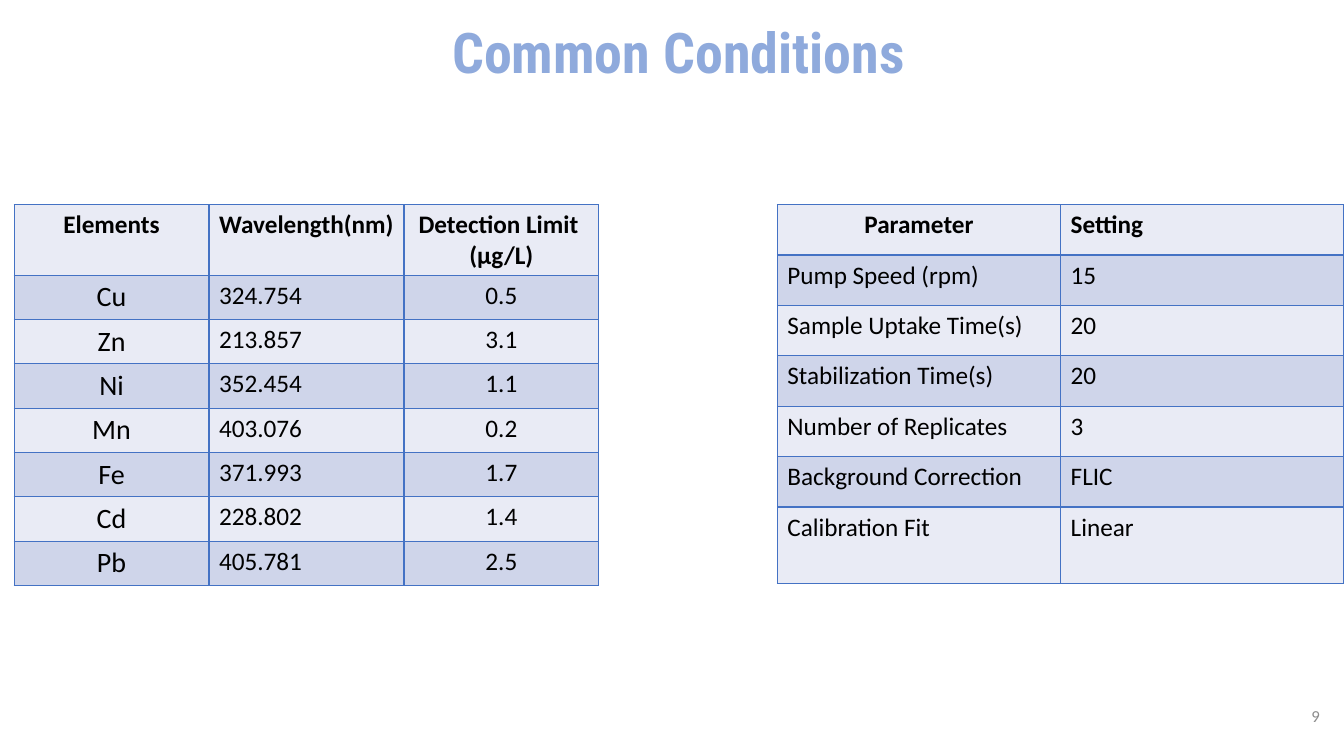
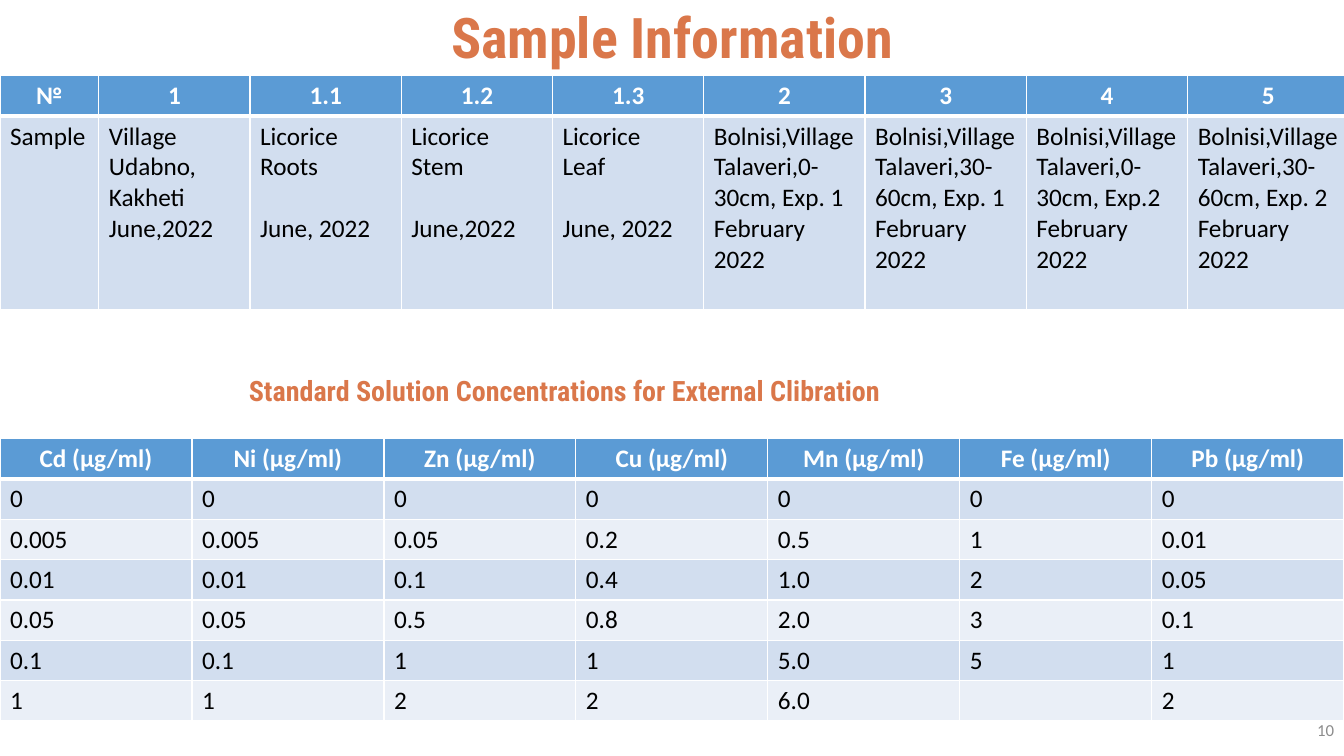
from lxml import etree
from pptx import Presentation
from pptx.dml.color import RGBColor
from pptx.enum.text import MSO_ANCHOR, PP_ALIGN
from pptx.oxml.ns import qn
from pptx.util import Inches, Pt

LEFT, CENTER, RIGHT = PP_ALIGN.LEFT, PP_ALIGN.CENTER, PP_ALIGN.RIGHT
TOP, MIDDLE, BOTTOM = MSO_ANCHOR.TOP, MSO_ANCHOR.MIDDLE, MSO_ANCHOR.BOTTOM

BLACK = RGBColor(0x00, 0x00, 0x00)
WHITE = RGBColor(0xFF, 0xFF, 0xFF)
GRAY = RGBColor(0x8C, 0x8C, 0x8C)
PERIWINKLE = RGBColor(0x8F, 0xAA, 0xDC)
ORANGE = RGBColor(0xDA, 0x77, 0x4A)
BLUE_LINE = RGBColor(0x44, 0x72, 0xC4)
LAVENDER = RGBColor(0xCF, 0xD5, 0xEA)
PALE_LAVENDER = RGBColor(0xE9, 0xEB, 0xF5)
BLUE = RGBColor(0x5B, 0x9B, 0xD5)
SKY = RGBColor(0xD2, 0xDE, 0xEF)
PALE_SKY = RGBColor(0xEA, 0xEF, 0xF7)

BODY_FONT, TITLE_FONT = "Calibri", "Roboto Condensed"
SLIDE_W, SLIDE_H = 13.33, 7.5

# Table looks: header fill and text, alternating body fills, borders in points
LAVENDER_LOOK = dict(head=PALE_LAVENDER, head_text=BLACK,
                     bands=(LAVENDER, PALE_LAVENDER), line=BLUE_LINE, head_rule=1)
BLUE_LOOK = dict(head=BLUE, head_text=WHITE,
                 bands=(SKY, PALE_SKY), line=WHITE, head_rule=3)

# Content; an empty line inside a cell becomes space before the next paragraph
ELEMENTS = [
    ("Elements", "Wavelength(nm)", "Detection Limit \n(μg/L)"),
    ("Cu", "324.754", "0.5"),
    ("Zn", "213.857", "3.1"),
    ("Ni", "352.454", "1.1"),
    ("Mn", "403.076", "0.2"),
    ("Fe", "371.993", "1.7"),
    ("Cd", "228.802", "1.4"),
    ("Pb", "405.781", "2.5"),
]
SETTINGS = [
    ("Parameter", "Setting"),
    ("Pump Speed (rpm)", "15"),
    ("Sample Uptake Time(s)", "20"),
    ("Stabilization Time(s)", "20"),
    ("Number of Replicates", "3"),
    ("Background Correction", "FLIC"),
    ("Calibration Fit", "Linear"),
]
SAMPLES = [
    ("№", "1", "1.1", "1.2", "1.3", "2", "3", "4", "5"),
    ("Sample",
     "Village Udabno,\nKakheti\nJune,2022",
     "Licorice Roots\n\nJune, 2022",
     "Licorice Stem\n\nJune,2022",
     "Licorice\nLeaf\n\nJune, 2022",
     "Bolnisi,Village Talaveri,0-30cm, Exp. 1\nFebruary 2022",
     "Bolnisi,Village Talaveri,30-60cm, Exp. 1\nFebruary 2022",
     "Bolnisi,Village Talaveri,0-30cm, Exp.2\nFebruary 2022",
     "Bolnisi,Village Talaveri,30-60cm, Exp. 2\nFebruary 2022"),
]
STANDARDS = [
    [f"{element} (μg/ml)" for element in ("Cd", "Ni", "Zn", "Cu", "Mn", "Fe", "Pb")],
    ("0", "0", "0", "0", "0", "0", "0"),
    ("0.005", "0.005", "0.05", "0.2", "0.5", "1", "0.01"),
    ("0.01", "0.01", "0.1", "0.4", "1.0", "2", "0.05"),
    ("0.05", "0.05", "0.5", "0.8", "2.0", "3", "0.1"),
    ("0.1", "0.1", "1", "1", "5.0", "5", "1"),
    ("1", "1", "2", "2", "6.0", "", "2"),
]


def write(tf, text, size=18, font=BODY_FONT, color=BLACK, bold=False,
          align=LEFT, spacing=None):
    """Fill a text frame, one paragraph for each line of text."""
    gap, p = 0, None
    for line in text.split("\n"):
        if not line:
            gap = size * 1.22
            continue
        p = tf.add_paragraph() if p is not None else tf.paragraphs[0]
        p.alignment = align
        if spacing:
            p.line_spacing = spacing
        if gap:
            p.space_before = Pt(gap)
            gap = 0
        r = p.add_run()
        r.text = line
        r.font.size, r.font.name, r.font.bold = Pt(size), font, bold
        r.font.color.rgb = color


def add_text(s, x, y, w, h, text, anchor=TOP, **fmt):
    tf = s.shapes.add_textbox(Inches(x), Inches(y), Inches(w), Inches(h)).text_frame
    tf.word_wrap = True
    tf.vertical_anchor = anchor
    write(tf, text, **fmt)


def set_borders(cell, color, bottom=1):
    tcPr = cell._tc.get_or_add_tcPr()
    for side, width in (("L", 1), ("R", 1), ("T", 1), ("B", bottom)):
        ln = etree.SubElement(tcPr, qn(f"a:ln{side}"), w=str(Pt(width)))
        fill = etree.SubElement(ln, qn("a:solidFill"))
        etree.SubElement(fill, qn("a:srgbClr"), val=str(color))


def add_table(s, x, y, cols, heights, rows, look,
              left_heads=(), centered=(), sizes=None):
    """left_heads and centered list columns; sizes maps a column to its body size."""
    table = s.shapes.add_table(len(rows), len(cols), Inches(x), Inches(y),
                               Inches(sum(cols)), Inches(sum(heights))).table
    for column, w in zip(table.columns, cols):
        column.width = Inches(w)
    for row, h in zip(table.rows, heights):
        row.height = Inches(h)
    for i, row in enumerate(rows):
        head = i == 0
        for j, text in enumerate(row):
            cell = table.cell(i, j)
            set_borders(cell, look["line"], look["head_rule"] if head else 1)
            cell.fill.solid()
            cell.fill.fore_color.rgb = look["head"] if head else look["bands"][(i - 1) % 2]
            middle = j not in left_heads if head else j in centered
            write(cell.text_frame, text, bold=head,
                  size=18 if head else (sizes or {}).get(j, 18),
                  color=look["head_text"] if head else BLACK,
                  align=CENTER if middle else LEFT)


def add_slide(prs, title, color, title_h, number, number_x, number_y):
    """Blank slide with the shared title and slide number."""
    s = prs.slides.add_slide(prs.slide_layouts[6])
    add_text(s, 0, 0, SLIDE_W, title_h, title, anchor=BOTTOM, size=40,
             font=TITLE_FONT, color=color, bold=True, align=CENTER, spacing=0.9)
    add_text(s, number_x, number_y, 3, 0.4, number, anchor=MIDDLE, size=12,
             color=GRAY, align=RIGHT)
    return s


def main():
    prs = Presentation()
    prs.slide_width, prs.slide_height = Inches(SLIDE_W), Inches(SLIDE_H)

    # Common conditions: elements on the left, settings on the right
    s = add_slide(prs, " Common Conditions", PERIWINKLE, 0.9, "9", 10.19, 6.9)
    add_table(s, 0.14, 2.03, [5.8 / 3] * 3, [0.7] + [0.44] * 7, ELEMENTS,
              LAVENDER_LOOK, centered=(0, 2), sizes={0: 20})
    add_table(s, 7.71, 2.03, [2.81] * 2, [0.5] * 6 + [0.76], SETTINGS,
              LAVENDER_LOOK, left_heads=(1,))

    # Sample information above, calibration standards below
    s = add_slide(prs, "Sample Information", ORANGE, 0.75, "10", 10.33, 7.04)
    add_table(s, 0, 0.75, [0.98] + [1.5] * 4 + [1.6] * 4, [0.4, 1.92], SAMPLES, BLUE_LOOK)
    add_text(s, 2.37, 3.66, 10, 0.44,
             "Standard Solution Concentrations for External Clibration",
             size=20, font=TITLE_FONT, color=ORANGE, bold=True)
    add_table(s, 0, 4.35, [SLIDE_W / 7] * 7, [0.4] * 7, STANDARDS, BLUE_LOOK)

    prs.save("out.pptx")


if __name__ == "__main__":
    main()
